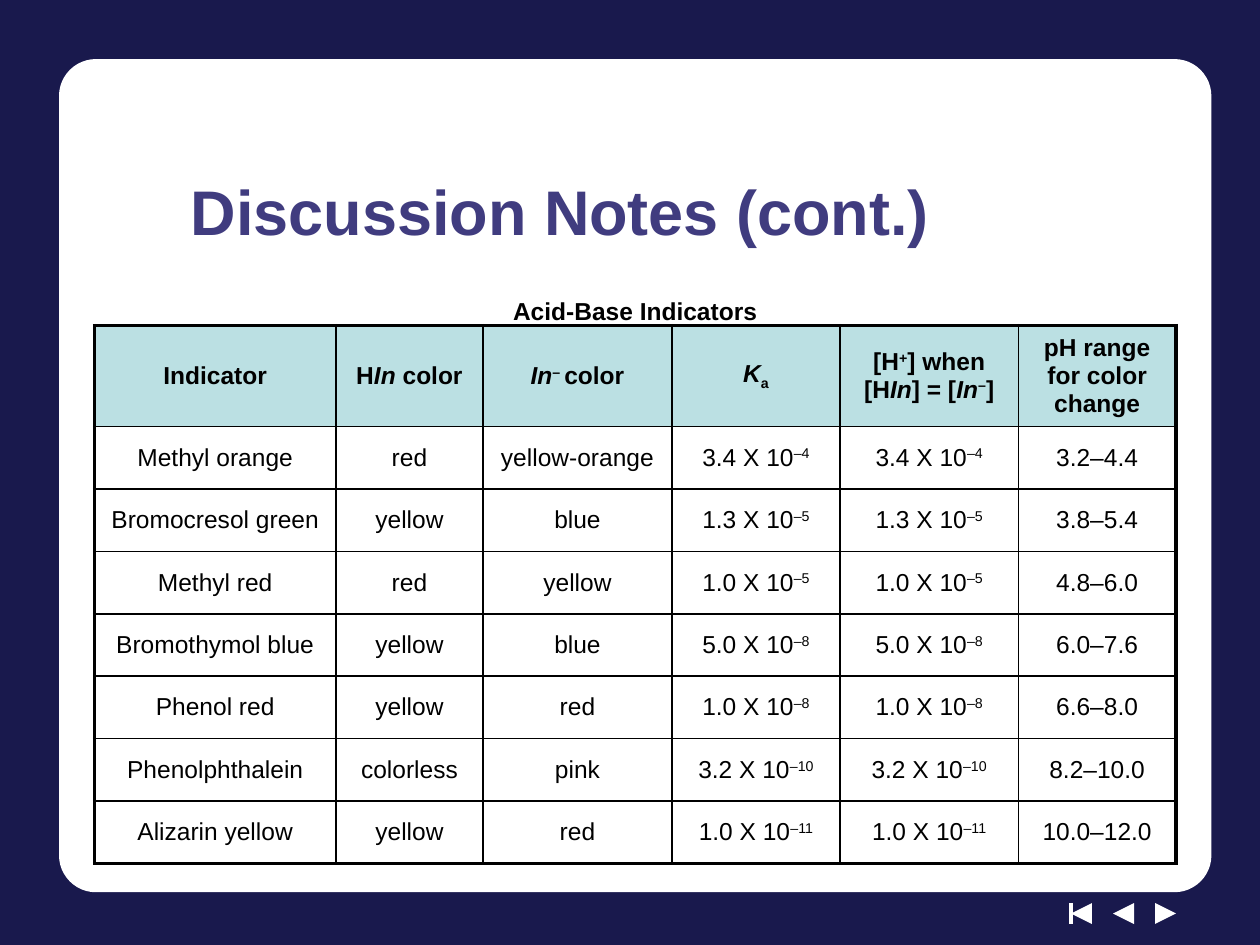
"""Build a slide with a table of acid-base indicators."""
from lxml import etree
from pptx import Presentation
from pptx import util as u
from pptx.dml.color import RGBColor
from pptx.enum import shapes, text
from pptx.oxml import ns

Pt = u.Pt
COLORS = {"navy": "19194D", "white": "FFFFFF", "title": "403C7F", "head": "BBE0E3", "black": "000000"}
BASELINES = {"^": "30000", "_": "-25000"}
HEADERS = ["Indicator", "H|/In| color", "/In|^– |color", "/K|_a",
           "[H|^+|] when [H|/In|] = [|/In|^–|]", "pH range for color change"]
INDICATORS = [
    ("Methyl orange", "red", "yellow-orange", "3.4 X 10|^–4", "3.2–4.4"),
    ("Bromocresol green", "yellow", "blue", "1.3 X 10|^–5", "3.8–5.4"),
    ("Methyl red", "red", "yellow", "1.0 X 10|^–5", "4.8–6.0"),
    ("Bromothymol blue", "yellow", "blue", "5.0 X 10|^–8", "6.0–7.6"),
    ("Phenol red", "yellow", "red", "1.0 X 10|^–8", "6.6–8.0"),
    ("Phenolphthalein", "colorless", "pink", "3.2 X 10|^–10", "8.2–10.0"),
    ("Alizarin yellow", "yellow", "red", "1.0 X 10|^–11", "10.0–12.0"),
]
COL_WIDTHS = [138, 84, 108, 96, 102, 90]
ROW_HEIGHTS = [57.6] + [35.7] * len(INDICATORS)


def add_filled(kind, x, y, w, h, color):
    sp = s.shapes.add_shape(kind, Pt(x), Pt(y), Pt(w), Pt(h))
    sp.shadow.inherit = False
    sp.fill.solid()
    sp.fill.fore_color.rgb = RGBColor.from_string(COLORS[color])
    sp.line.fill.background()
    return sp


def write_runs(p, markup, size, color, bold):
    for part in markup.split("|"):
        r = p.add_run()
        r.text = part.lstrip("/^_")
        r.font.name, r.font.size, r.font.bold = "Arial", Pt(size), bold
        r.font.italic = part.startswith("/")
        r.font.color.rgb = RGBColor.from_string(COLORS[color])
        if part[0] in BASELINES:
            r._r.get_or_add_rPr().set("baseline", BASELINES[part[0]])


prs = Presentation()
prs.slide_width, prs.slide_height = Pt(720), Pt(540)
s = prs.slides.add_slide(prs.slide_layouts[6])

add_filled(shapes.MSO_SHAPE.RECTANGLE, 0, 0, 720, 540, "navy")
for x, angle in [(660, 90), (636, 270), (612, 270)]:
    sp = add_filled(shapes.MSO_SHAPE.ISOSCELES_TRIANGLE, x, 516, 12, 12, "white")
    sp.rotation = angle

bar = s.shapes.add_connector(shapes.MSO_CONNECTOR.STRAIGHT, Pt(612), Pt(516), Pt(612), Pt(528))
bar.line.color.rgb = RGBColor.from_string(COLORS["white"])
bar.line.width = Pt(2)
etree.SubElement(bar._element.spPr, ns.qn("a:effectLst"))

panel = add_filled(shapes.MSO_SHAPE.ROUNDED_RECTANGLE, 36, 36, 654, 471.6, "white")
panel.adjustments[0] = 0.04
panel.line.color.rgb = RGBColor.from_string(COLORS["white"])
panel.line.width = Pt(4.5)

title = s.shapes.add_textbox(Pt(102), Pt(84), Pt(582), Pt(72))
tf = title.text_frame
tf.word_wrap = True
tf.vertical_anchor = text.MSO_ANCHOR.MIDDLE
write_runs(tf.paragraphs[0], "Discussion Notes (cont.)", 36, "title", True)

frame = s.shapes.add_table(len(ROW_HEIGHTS), len(COL_WIDTHS), Pt(54), Pt(186),
                           Pt(sum(COL_WIDTHS)), Pt(sum(ROW_HEIGHTS)))
table = frame.table
table.first_row = table.horz_banding = False
for col, width in zip(table.columns, COL_WIDTHS):
    col.width = Pt(width)
for row, height in zip(table.rows, ROW_HEIGHTS):
    row.height = Pt(height)

last_row, last_col = len(ROW_HEIGHTS) - 1, len(COL_WIDTHS) - 1
body = [(name, acid, base, ka, ka, ph) for name, acid, base, ka, ph in INDICATORS]
for i, values in enumerate([HEADERS] + body):
    for j, value in enumerate(values):
        cell = table.cell(i, j)
        cell.vertical_anchor = text.MSO_ANCHOR.MIDDLE
        edges = {"a:lnL": j == 0, "a:lnR": j == last_col, "a:lnT": i == 0, "a:lnB": i == last_row}
        for tag, outer in edges.items():
            ln = etree.SubElement(cell._tc.get_or_add_tcPr(), ns.qn(tag), w=str(Pt(2.25 if outer else 1)))
            fill = etree.SubElement(ln, ns.qn("a:solidFill"))
            etree.SubElement(fill, ns.qn("a:srgbClr"), val=COLORS["black"])
        if i == 0:
            cell.fill.solid()
            cell.fill.fore_color.rgb = RGBColor.from_string(COLORS["head"])
        else:
            cell.fill.background()
        p = cell.text_frame.paragraphs[0]
        p.alignment = text.PP_ALIGN.CENTER
        p.space_before = Pt(2.8)
        write_runs(p, value, 14, "black", i == 0)

caption = s.shapes.add_textbox(Pt(54), Pt(150), Pt(618), Pt(36))
tf = caption.text_frame
tf.word_wrap = True
tf.margin_top = Pt(21.5)
tf.margin_bottom = 0
p = tf.paragraphs[0]
p.alignment = text.PP_ALIGN.CENTER
write_runs(p, "Acid-Base Indicators", 14, "black", True)

prs.save("out.pptx")
